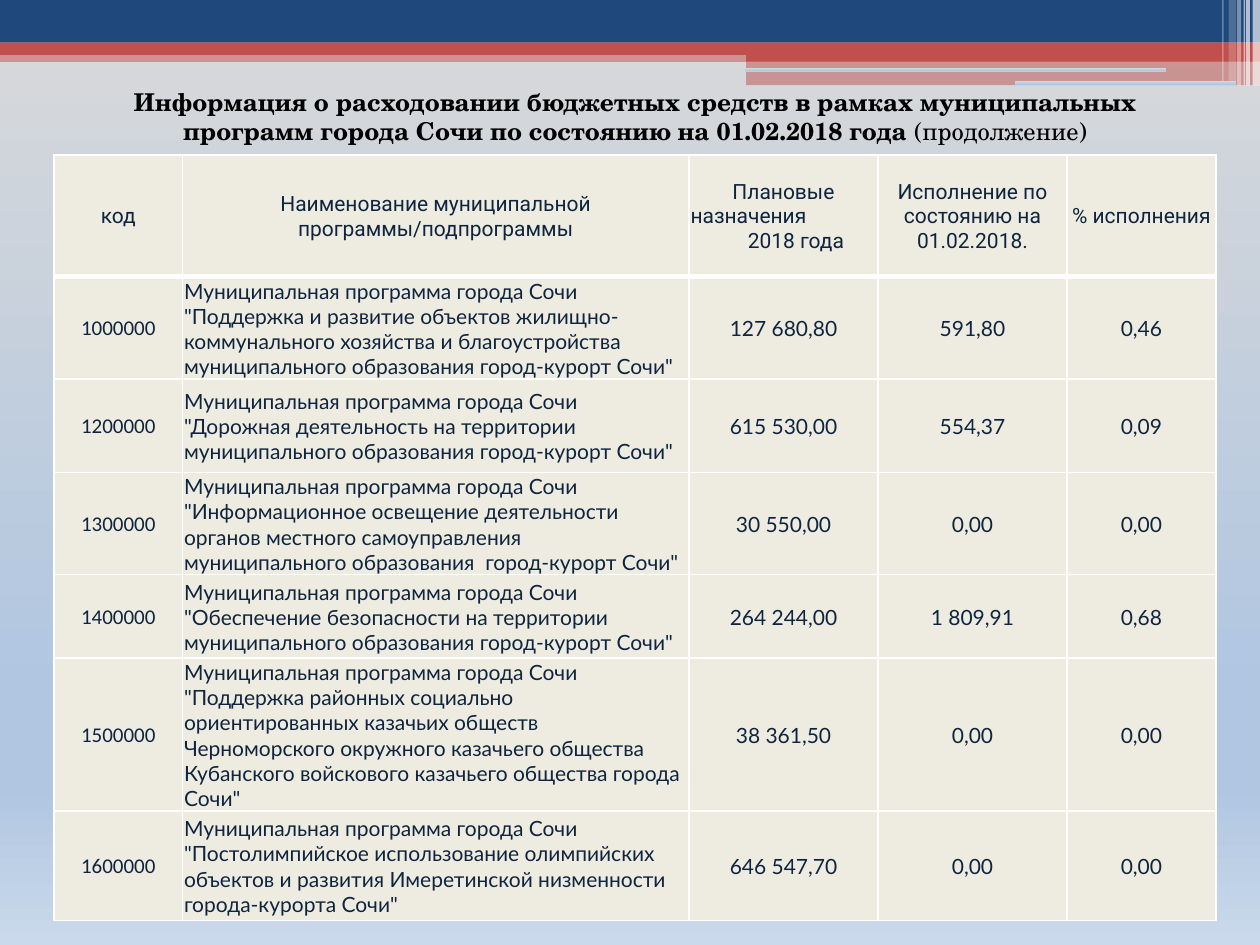
from copy import deepcopy

from pptx import Presentation
from pptx.dml.color import RGBColor
from pptx.enum.shapes import MSO_SHAPE
from pptx.enum.text import MSO_ANCHOR, PP_ALIGN
from pptx.oxml.ns import qn
from pptx.util import Cm, Pt
from lxml.etree import SubElement

NAVY = RGBColor(0x1F, 0x49, 0x7D)
RED = RGBColor(0xC0, 0x50, 0x4D)
WHITE = RGBColor(0xFF, 0xFF, 0xFF)
BLACK = RGBColor(0x00, 0x00, 0x00)
INK = RGBColor(0x0F, 0x24, 0x3E)
CREAM = RGBColor(0xEE, 0xEC, 0xE1)
SKY = [
    (0, RGBColor(0xD9, 0xD9, 0xD9)),
    (0.74, RGBColor(0xB0, 0xC6, 0xE1)),
    (0.83, RGBColor(0xB0, 0xC6, 0xE1)),
    (1, RGBColor(0xCA, 0xD9, 0xEB)),
]

# left, top, width, height in cm, colour, opacity in percent
BANDS = [
    (0, 1.02, 25.4, 0.23, RED, 50),
    (0, 0, 25.4, 0.86, NAVY, 100),
    (0, 0.86, 25.4, 0.25, RED, 100),
    (15.04, 0.99, 10.36, 0.25, RED, 100),
    (15.04, 1.22, 10.36, 0.5, RED, 50),
]
SLOTS = [(15.01, 1.37, 8.51, 0.08), (20.47, 1.63, 4.45, 0.1)]
# left, width, height in cm, opacity in percent
STRIPES = [
    (25.25, 0.15, 1.73, 65),
    (25.12, 0.08, 1.73, 65),
    (25.07, 0.03, 1.73, 60),
    (24.94, 0.08, 1.73, 40),
    (24.77, 0.15, 1.63, 20),
    (24.64, 0.03, 1.63, 30),
]

TITLE = [
    ("Информация о расходовании бюджетных средств в рамках муниципальных "
     "программ города Сочи по состоянию на 01.02.2018 года ", True),
    ("(продолжение)", False),
]
COLUMNS = [2.59, 10.21, 3.81, 3.81, 3.0]
ROWS = [2.46, 1.65, 1.88, 1.63, 1.68, 2.06, 2.21]
HEADER = [
    "код",
    "Наименование муниципальной программы/подпрограммы",
    "Плановые\nназначения\n2018 года",
    "Исполнение по состоянию на 01.02.2018.",
    "% исполнения",
]
PREFIX = "Муниципальная программа города Сочи "
PROGRAMMES = [
    ("1000000", '"Поддержка и развитие объектов жилищно-коммунального хозяйства и '
     'благоустройства муниципального образования город-курорт Сочи"',
     "127 680,80", "591,80", "0,46"),
    ("1200000", '"Дорожная деятельность на территории муниципального образования '
     'город-курорт Сочи"', "615 530,00", "554,37", "0,09"),
    ("1300000", '"Информационное освещение деятельности органов местного '
     'самоуправления муниципального образования  город-курорт Сочи"',
     "30 550,00", "0,00", "0,00"),
    ("1400000", '"Обеспечение безопасности на территории муниципального '
     'образования город-курорт Сочи"', "264 244,00", "1 809,91", "0,68"),
    ("1500000", '"Поддержка районных социально ориентированных казачьих обществ '
     'Черноморского окружного казачьего общества Кубанского войскового '
     'казачьего общества города Сочи"', "38 361,50", "0,00", "0,00"),
    ("1600000", '"Постолимпийское использование олимпийских объектов и развития '
     'Имеретинской низменности города-курорта Сочи"',
     "646 547,70", "0,00", "0,00"),
]


class Deck:
    def __init__(self):
        self.prs = Presentation()
        self.prs.slide_width, self.prs.slide_height = Cm(25.4), Cm(19.05)
        self.s = self.prs.slides.add_slide(self.prs.slide_layouts[6])

    def gradient(self, fill, element):
        """Fill with the vertical sky gradient; element holds the fill's XML."""
        fill.gradient()
        fill.gradient_angle = 270
        stops = element.find(".//" + qn("a:gsLst"))
        while len(stops) < len(SKY):
            stops.append(deepcopy(stops[0]))
        for stop, (position, color) in zip(fill.gradient_stops, SKY):
            stop.position = position
            stop.color.rgb = color

    def background(self):
        self.gradient(self.s.background.fill, self.s.element)

    def shape(self, kind, box):
        sp = self.s.shapes.add_shape(kind, *map(Cm, box))
        sp.shadow.inherit = False
        sp.line.fill.background()
        return sp

    def band(self, box, color, opacity):
        sp = self.shape(MSO_SHAPE.RECTANGLE, box)
        sp.fill.solid()
        sp.fill.fore_color.rgb = color
        if opacity < 100:
            clr = sp.element.spPr.find(".//" + qn("a:srgbClr"))
            SubElement(clr, qn("a:alpha"), val=str(opacity * 1000))

    def slot(self, box):
        sp = self.shape(MSO_SHAPE.ROUNDED_RECTANGLE, box)
        self.gradient(sp.fill, sp.element)

    def font(self, r, name, size, color, bold=False):
        r.font.name, r.font.size, r.font.bold = name, Pt(size), bold
        r.font.color.rgb = color

    def title(self, box, parts):
        tf = self.s.shapes.add_textbox(*map(Cm, box)).text_frame
        tf.word_wrap = True
        p = tf.paragraphs[0]
        p.alignment = PP_ALIGN.CENTER
        for text, bold in parts:
            r = p.add_run()
            r.text = text
            self.font(r, "TeX Gyre Schola", 14, BLACK, bold)

    def border(self, cell, top, bottom):
        tcPr = cell._tc.get_or_add_tcPr()
        for side, width in zip("LRTB", (1, 1, top, bottom)):
            ln = SubElement(tcPr, qn(f"a:ln{side}"), w=str(Pt(width)))
            fill = SubElement(ln, qn("a:solidFill"))
            SubElement(fill, qn("a:srgbClr"), val=str(WHITE))

    def cell(self, cell, text, font, align, top=1, bottom=1):
        self.border(cell, top, bottom)
        cell.fill.solid()
        cell.fill.fore_color.rgb = CREAM
        cell.vertical_anchor = MSO_ANCHOR.MIDDLE
        cell.margin_left = cell.margin_right = cell.margin_top = Cm(0.03)
        cell.margin_bottom = 0
        cell.text_frame.text = text
        for p in cell.text_frame.paragraphs:
            p.alignment = align
            for r in p.runs:
                self.font(r, font, 12, INK)

    def table(self, left, top, header, rows):
        frame = self.s.shapes.add_table(len(ROWS), len(COLUMNS), Cm(left), Cm(top),
                                        Cm(sum(COLUMNS)), Cm(sum(ROWS)))
        tbl = frame.table
        tbl.first_row = tbl.horz_banding = False
        for column, width in zip(tbl.columns, COLUMNS):
            column.width = Cm(width)
        for row, height in zip(tbl.rows, ROWS):
            row.height = Cm(height)
        for j, text in enumerate(header):
            self.cell(tbl.cell(0, j), text, "Roboto", PP_ALIGN.CENTER, bottom=3)
        for i, values in enumerate(rows, 1):
            for j, text in enumerate(values):
                self.cell(tbl.cell(i, j), PREFIX + text if j == 1 else text,
                          "Lato" if j else "Calibri",
                          PP_ALIGN.LEFT if j == 1 else PP_ALIGN.CENTER,
                          top=3 if i == 1 else 1)
        _, middle, last = tbl.cell(0, 2).text_frame.paragraphs
        middle.alignment = PP_ALIGN.LEFT
        last._p.get_or_add_pPr().set("marL", str(Cm(0.5)))


def main():
    deck = Deck()
    deck.background()
    for *box, color, opacity in BANDS:
        deck.band(box, color, opacity)
    for box in SLOTS:
        deck.slot(box)
    for left, width, height, opacity in STRIPES:
        deck.band((left, 0, width, height), WHITE, opacity)
    deck.table(1.09, 3.12, HEADER, PROGRAMMES)
    deck.title((1.5, 1.63, 22.61, 1.45), TITLE)
    deck.prs.save("out.pptx")


if __name__ == "__main__":
    main()
